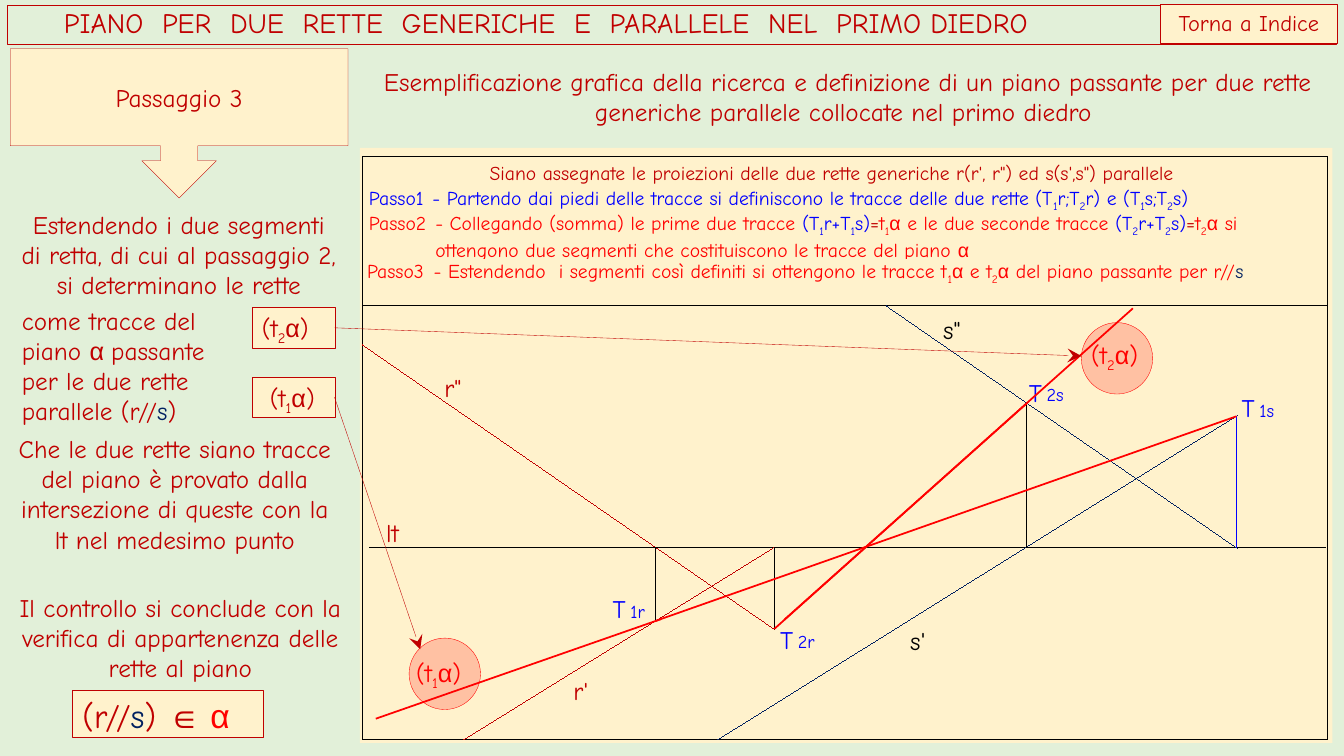
from itertools import groupby

from lxml import etree
from pptx import Presentation
from pptx.dml.color import RGBColor
from pptx.enum.shapes import MSO_CONNECTOR, MSO_SHAPE
from pptx.enum.text import MSO_ANCHOR, MSO_AUTO_SIZE, PP_ALIGN
from pptx.oxml.ns import qn
from pptx.util import Cm, Pt

STRAIGHT = MSO_CONNECTOR.STRAIGHT
CALLOUT, ELLIPSE, RECTANGLE = MSO_SHAPE.DOWN_ARROW_CALLOUT, MSO_SHAPE.OVAL, MSO_SHAPE.RECTANGLE
MIDDLE, TOP = MSO_ANCHOR.MIDDLE, MSO_ANCHOR.TOP
LEFT, CENTER = PP_ALIGN.LEFT, PP_ALIGN.CENTER
GROW = MSO_AUTO_SIZE.SHAPE_TO_FIT_TEXT

GREEN = RGBColor(0xE2, 0xF0, 0xD9)
CREAM = RGBColor(0xFF, 0xF2, 0xCC)
DARK_RED = RGBColor(0xC0, 0x00, 0x00)
RED = RGBColor(0xFF, 0x00, 0x00)
BLUE = RGBColor(0x00, 0x00, 0xFF)
NAVY = RGBColor(0x00, 0x20, 0x60)
BLACK = RGBColor(0x00, 0x00, 0x00)

HAIRLINE, THIN, BOLD = 0.01, 0.25, 1.25
SUBSCRIPTS = {"₁": "1", "₂": "2"}
SYMBOLS = "α∈"

prs = Presentation()
prs.slide_width, prs.slide_height = Cm(33.87), Cm(19.05)
slide = prs.slides.add_slide(prs.slide_layouts[6])
slide.background.fill.solid()
slide.background.fill.fore_color.rgb = GREEN


def write(text, x, y, w, h, size=18, color=DARK_RED, align=LEFT, fill=None, border=None,
          tight=False, wrap=True, indent=0.25, anchor=TOP, spacing=None, shape=None):
    """Text is a string or (string, colour) parts; ₁ and ₂ become subscript runs."""
    box = shape or slide.shapes.add_textbox(Cm(x), Cm(y), Cm(w), Cm(h))
    if fill is not None:
        box.fill.solid()
        box.fill.fore_color.rgb = fill
    if border is not None:
        box.line.color.rgb = border
        box.line.width = Pt(THIN)
    frame = box.text_frame
    frame.word_wrap = wrap
    frame.vertical_anchor = anchor
    if anchor == TOP:
        frame.auto_size = GROW
    frame.margin_left = Cm(0 if tight else indent)
    if tight:
        frame.margin_right = frame.margin_top = frame.margin_bottom = 0
    paragraph = frame.paragraphs[0]
    paragraph.alignment = align
    paragraph.line_spacing = spacing
    for part, part_color in [(text, color)] if isinstance(text, str) else text:
        only_symbol = part.strip() in SYMBOLS
        for kind, letters in groupby(
                part, lambda c: "sub" if c in SUBSCRIPTS else only_symbol or c in SYMBOLS):
            run = paragraph.add_run()
            run.text = "".join(SUBSCRIPTS.get(c, c) for c in letters)
            run.font.size = Pt(size)
            run.font.color.rgb = part_color
            run.font.name = "Arial" if kind is True else "Comic Neue"
            if kind == "sub":
                run.font._element.set("baseline", "-25000")
            if "∈" in run.text:
                run.font.bold = True


def draw_line(x1, y1, x2, y2, color, width=HAIRLINE, arrow=False):
    line = slide.shapes.add_connector(STRAIGHT, Cm(x1), Cm(y1), Cm(x2), Cm(y2))
    line.line.color.rgb = color
    line.line.width = Pt(width)
    if arrow:
        etree.SubElement(line.line._get_or_add_ln(), qn("a:tailEnd"),
                         type="stealth", w="lg", len="lg")
    etree.SubElement(line._element.spPr, qn("a:effectLst"))


# Title bar, step callout and heading
write("PIANO  PER  DUE  RETTE  GENERICHE  E  PARALLELE  NEL  PRIMO DIEDRO",
      0.18, 0.12, 33.5, 0.99, size=20, border=DARK_RED, indent=1.43, anchor=MIDDLE, spacing=0.9)
callout_place = (0.26, 1.23, 8.51, 3.76)
callout = slide.shapes.add_shape(CALLOUT, *map(Cm, callout_place))
callout.shadow.inherit = False
write("Passaggio 3", *callout_place, align=CENTER, fill=CREAM, border=DARK_RED,
      anchor=MIDDLE, shape=callout)
write("Torna a Indice", 29.24, 0.11, 4.47, 0.99, size=16, align=CENTER, fill=CREAM, border=DARK_RED)
write("Esemplificazione grafica della ricerca e definizione di un piano passante per due rette "
      "generiche parallele collocate nel primo diedro ", 9.17, 1.54, 24.38, 1.8, align=CENTER)

# Drawing panel and its frame
for place, outlined in [((9.07, 3.73, 24.51, 14.99), False), ((9.14, 3.95, 24.32, 14.69), True)]:
    panel = slide.shapes.add_shape(RECTANGLE, *map(Cm, place))
    panel.shadow.inherit = False
    panel.fill.solid()
    panel.fill.fore_color.rgb = CREAM
    if outlined:
        panel.line.color.rgb = BLACK
        panel.line.width = Pt(HAIRLINE)
    else:
        panel.line.fill.background()

# Names of lines and trace points, below the lines so that they cover none
for name, x, y, color in [("lt", 9.73, 13.03, DARK_RED), ('r"', 11.2, 9.37, DARK_RED),
                          ("r'", 14.45, 17.02, DARK_RED), ('s"', 23.77, 7.92, BLACK),
                          ("s'", 22.94, 15.75, BLACK)]:
    write(name, x, y, 0.57, 0.76, color=color, fill=CREAM, tight=True, wrap=False)
for index, x, y in [("2r", 19.66, 15.72), ("2s", 25.93, 9.5),
                    ("1s", 31.29, 9.88), ("1r", 15.44, 14.96)]:
    write("T", x, y, 0.43, 0.76, color=BLUE, fill=CREAM, tight=True, wrap=False)
    write(index, x + 0.45, y + 0.17, 0.47, 0.56, size=13, color=BLUE, fill=CREAM,
          tight=True, wrap=False)

# Ground line, projections of r and s, and verticals of the traces
ground, panel_top, panel_bottom = 13.79, 7.7, 18.64
for projection in [
    (9.32, ground, 33.4, ground, BLACK),
    (33.45, panel_top, 9.14, panel_top, BLACK),
    (9.14, 8.69, 19.51, 15.85, DARK_RED),
    (11.68, panel_bottom, 19.51, ground, DARK_RED),
    (22.33, panel_top, 31.19, 13.82, NAVY),
    (18.08, panel_bottom, 31.19, 10.46, NAVY),
]:
    draw_line(*projection)
for x, trace_y, color in [(25.88, 10.16, BLACK), (19.51, 15.85, BLACK),
                          (16.51, 15.65, BLACK), (31.16, 10.49, BLUE)]:
    draw_line(x, ground, x, trace_y, color)

# Segments joining the traces
draw_line(19.51, 15.85, 25.88, 10.16, RED, BOLD)
draw_line(16.51, 15.65, 31.16, 10.49, RED, BOLD)

# Steps of the construction
write("Siano assegnate le proiezioni delle due rette generiche r(r', r\") ed s(s',s\") parallele",
      12.34, 4.06, 19.25, 0.61, size=14, fill=CREAM, tight=True, wrap=False)
steps = [
    ("Passo1", 9.3, 10.9, 4.68, 0.61, BLUE,
     "- Partendo dai piedi delle tracce si definiscono le tracce delle due rette (T₁r;T₂r) e (T₁s;T₂s)"),
    ("Passo2", 9.3, 10.97, 5.31, 1.19, RED, [
        ("- Collegando (somma) le prime due tracce ", RED), ("(T₁r+T₁s)", BLUE), ("=", DARK_RED),
        ("t₁α e le due seconde tracce ", RED), ("(T₂r+T₂s)", BLUE), ("=", DARK_RED),
        ("t₂α si ottengono due segmenti che costituiscono le tracce del piano α", RED)]),
    ("Passo3", 9.25, 10.93, 6.53, 0.61, RED, [
        ("- Estendendo  i segmenti così definiti si ottengono le tracce t₁α e t₂α "
         "del piano passante per r//", RED), ("s", NAVY)]),
]
for step, step_x, text_x, y, height, color, text in steps:
    write(step, step_x, y, 1.6, 0.61, size=14, color=color, fill=CREAM, tight=True, wrap=False)
    write(text, text_x, y, 22.43, height, size=14, color=color, fill=CREAM, tight=True)

# Extensions of the segments
draw_line(19.76, 15.62, 28.55, 7.77, RED, BOLD)
draw_line(9.47, 18.11, 16.66, 15.6, RED, BOLD)

# Plane traces: boxed name, arrow and circled name on the drawing
for trace, box_y, indent, tag_x, tag_y, circle_x, circle_y, arrow_end in [
    ("(t₁α)", 9.5, 0.45, 10.24, 16.43, 10.31, 16.08, (10.59, 16.36)),
    ("(t₂α)", 7.75, 0.25, 27.25, 8.43, 27.25, 8.13, (27.25, 8.97)),
]:
    write(trace, 6.35, box_y, 2.11, 1.02, fill=CREAM, border=DARK_RED, indent=indent)
    write(trace, tag_x, tag_y, 1.93, 1.02, color=RED)
    draw_line(8.43, box_y + 0.51, *arrow_end, DARK_RED, THIN, arrow=True)
    circle = slide.shapes.add_shape(ELLIPSE, Cm(circle_x), Cm(circle_y), Cm(1.8), Cm(1.8))
    circle.shadow.inherit = False
    circle.fill.solid()
    circle.fill.fore_color.rgb = RED
    tint = circle._element.spPr.find(qn("a:solidFill"))[0]
    etree.SubElement(tint, qn("a:alpha"), val="20000")
    circle.line.color.rgb = RED
    circle.line.width = Pt(THIN)

# Explanation in the left column
write("Estendendo i due segmenti di retta, di cui al passaggio 2, si determinano le rette",
      0.25, 5.15, 8.51, 2.57, align=CENTER)
write([("come tracce del piano ", DARK_RED), ("α ", DARK_RED),
       ("passante per le due rette parallele (r//", DARK_RED),
       ("s", NAVY), (")", DARK_RED)], 0.3, 7.56, 5.92, 3.33)
write("Che le due rette siano tracce del piano è provato dalla intersezione di queste con la "
      "lt nel medesimo punto", 0.15, 10.79, 8.51, 4.11, align=CENTER)
write("Il controllo si conclude con la verifica di appartenenza delle rette al piano",
      0.15, 14.8, 8.79, 2.57, align=CENTER)
write([("(r//", DARK_RED), ("s", NAVY), (") ", DARK_RED), ("∈ ", DARK_RED), ("α", RED)],
      1.83, 17.39, 4.8, 1.19, size=24, fill=CREAM, border=DARK_RED)

prs.save("out.pptx")
